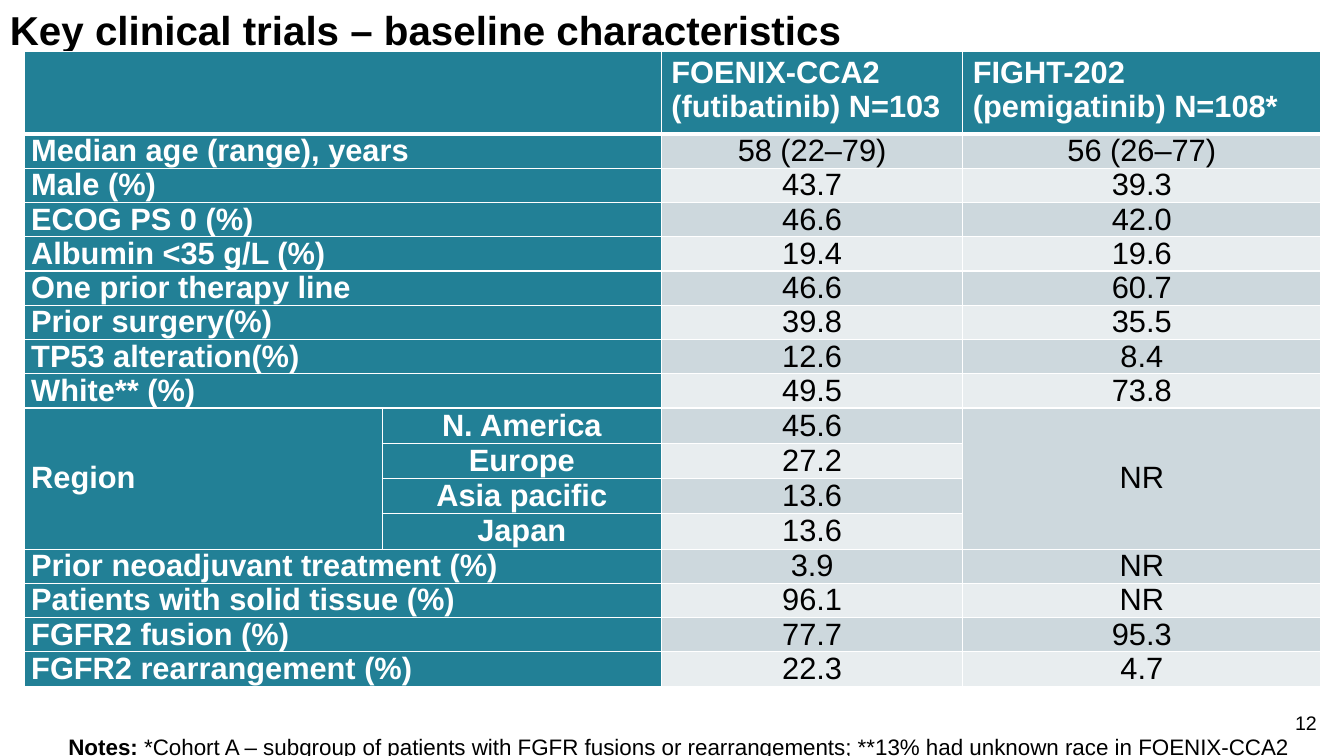
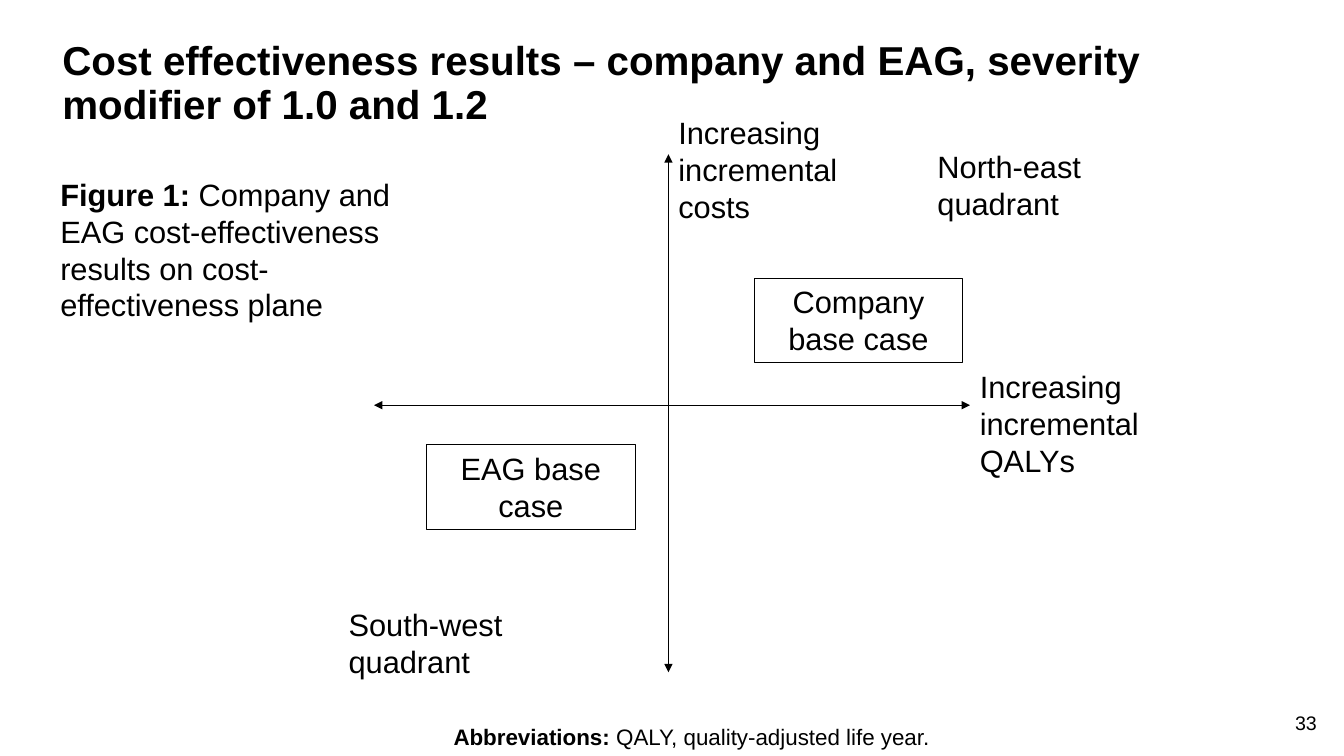
from lxml import etree
from pptx import Presentation
from pptx import util as u
from pptx.dml.color import RGBColor
from pptx.enum import shapes, text
from pptx.oxml import ns

PX = 9144
FONT = "Arial"
COLORS = {"ink": "000000", "white": "FFFFFF", "teal": "228096", "band": "CDD8DD", "pale": "E8EDEF"}
LEFT, CENTER, RIGHT = text.PP_ALIGN.LEFT, text.PP_ALIGN.CENTER, text.PP_ALIGN.RIGHT


def write(frame, runs, size, align=LEFT, color="ink", spacing=1.2):
    frame.word_wrap = True
    para = frame.paragraphs[0]
    para.alignment = align
    para.line_spacing = u.Pt(size * spacing)
    for words, bold in runs:
        span = para.add_run()
        span.text = words
        span.font.name = FONT
        span.font.size = u.Pt(size)
        span.font.bold = bold
        span.font.color.rgb = RGBColor.from_string(COLORS[color])


def add_text(page, place, runs, size=22, align=LEFT, spacing=1.2):
    box = page.shapes.add_textbox(*[n * PX for n in place])
    write(box.text_frame, runs, size, align, spacing=spacing)


deck = Presentation()
deck.slide_width, deck.slide_height = 1333 * PX, 750 * PX

pages = []
for title, place, number in [
    ("Key clinical trials – baseline characteristics", (0, 5, 1230, 65), "12"),
    ("Cost effectiveness results – company and EAG, severity modifier of 1.0 and 1.2", (52, 34, 1230, 82), "33"),
]:
    page = deck.slides.add_slide(deck.slide_layouts[6])
    add_text(page, place, [(title, True)], 28.8, spacing=1.09)
    add_text(page, (1265, 700, 51, 40), [(number, False)], 14, RIGHT)
    pages.append(page)
trials_page, results_page = pages

rows = [
    ("", "", "FOENIX-CCA2 (futibatinib) N=103", "FIGHT-202 (pemigatinib) N=108*"),
    ("Median age (range), years", "", "58 (22–79)", "56 (26–77)"),
    ("Male (%)", "", "43.7", "39.3"),
    ("ECOG PS 0 (%)", "", "46.6", "42.0"),
    ("Albumin <35 g/L (%)", "", "19.4", "19.6"),
    ("One prior therapy line", "", "46.6", "60.7"),
    ("Prior surgery(%)", "", "39.8", "35.5"),
    ("TP53 alteration(%)", "", "12.6", "8.4"),
    ("White** (%)", "", "49.5", "73.8"),
    ("Region", "N. America", "45.6", "NR"),
    ("", "Europe", "27.2", ""),
    ("", "Asia pacific", "13.6", ""),
    ("", "Japan", "13.6", ""),
    ("Prior neoadjuvant treatment (%)", "", "3.9", "NR"),
    ("Patients with solid tissue (%)", "", "96.1", "NR"),
    ("FGFR2 fusion (%)", "", "77.7", "95.3"),
    ("FGFR2 rearrangement (%)", "", "22.3", "4.7"),
]
region_rows = range(9, 13)
widths = [355, 277, 299, 355]
heights = [82] + [35 if r in region_rows else 34 for r in range(1, len(rows))]
frame = trials_page.shapes.add_table(
    len(rows), len(widths), 24 * PX, 51 * PX, sum(widths) * PX, sum(heights) * PX)
table = frame.table
table.horz_banding = False
for column, width in zip(table.columns, widths):
    column.width = width * PX

for r, (values, height) in enumerate(zip(rows, heights)):
    table.rows[r].height = height * PX
    for c, value in enumerate(values):
        cell = table.cell(r, c)
        header = r == 0
        strong = header or c < 2
        sides, ends = (10, 5) if header else (7, 0)
        cell.margin_left = cell.margin_right = sides * PX
        cell.margin_top = cell.margin_bottom = ends * PX
        cell.vertical_anchor = text.MSO_ANCHOR.TOP if header else text.MSO_ANCHOR.MIDDLE
        align = LEFT if header or c == 0 else CENTER
        runs = [(value, strong)] if value else []
        write(cell.text_frame, runs, 22, align, "white" if strong else "ink", 1.1)
        cell.fill.solid()
        shade = "teal" if strong else "band" if r % 2 else "pale"
        cell.fill.fore_color.rgb = RGBColor.from_string(COLORS[shade])
        props = cell._tc.get_or_add_tcPr()
        for i, side in enumerate(["lnL", "lnR", "lnT", "lnB"]):
            thick = (r, side) in [(0, "lnB"), (1, "lnT")]
            border = etree.Element(ns.qn("a:" + side), w=str(u.Pt(3 if thick else 1)))
            fill = etree.SubElement(border, ns.qn("a:solidFill"))
            etree.SubElement(fill, ns.qn("a:srgbClr"), val=COLORS["white"])
            props.insert(i, border)

for r in range(len(rows)):
    if r not in region_rows:
        table.cell(r, 0).merge(table.cell(r, 1))
for c in (0, 3):
    table.cell(region_rows[0], c).merge(table.cell(region_rows[-1], c))

add_text(trials_page, (58, 722, 1275, 28), [
    ("Notes: ", True),
    ("*Cohort A – subgroup of patients with FGFR fusions or rearrangements; "
     "**13% had unknown race in FOENIX-CCA2", False),
], 16)

add_text(results_page, (50, 169, 363, 158), [
    ("Figure 1: ", True),
    ("Company and EAG cost-effectiveness results on cost-effectiveness plane", False),
])

for ends in [(663, 153, 663, 667), (371, 402, 962, 402)]:
    axis = results_page.shapes.add_connector(shapes.MSO_CONNECTOR.STRAIGHT, *[n * PX for n in ends])
    axis.line.color.rgb = RGBColor.from_string(COLORS["ink"])
    axis.line.width = u.Pt(0.5)
    line = axis.line._get_or_add_ln()
    for end in ("a:headEnd", "a:tailEnd"):
        etree.SubElement(line, ns.qn(end), type="triangle")
    etree.SubElement(axis._element.spPr, ns.qn("a:effectLst"))

for label, left, top, height in [
    ("Increasing incremental costs", 663, 108, 121),
    ("Increasing incremental QALYs", 962, 360, 121),
    ("South-west quadrant", 336, 596, 84),
    ("North-east quadrant", 920, 142, 84),
]:
    add_text(results_page, (left, top, 207, height), [(label, False)])

for label, left, top in [("Company base case", 748, 276), ("EAG base case", 423, 441)]:
    case = results_page.shapes.add_shape(
        shapes.MSO_SHAPE.RECTANGLE, left * PX, top * PX, 207 * PX, 84 * PX)
    case.shadow.inherit = False
    case.fill.background()
    case.line.color.rgb = RGBColor.from_string(COLORS["ink"])
    case.line.width = u.Pt(0.75)
    case.text_frame.vertical_anchor = text.MSO_ANCHOR.TOP
    write(case.text_frame, [(label, False)], 22, CENTER)

add_text(results_page, (440, 713, 893, 37), [
    ("Abbreviations: ", True),
    ("QALY, quality-adjusted life year.", False),
], 16)

deck.save("out.pptx")
